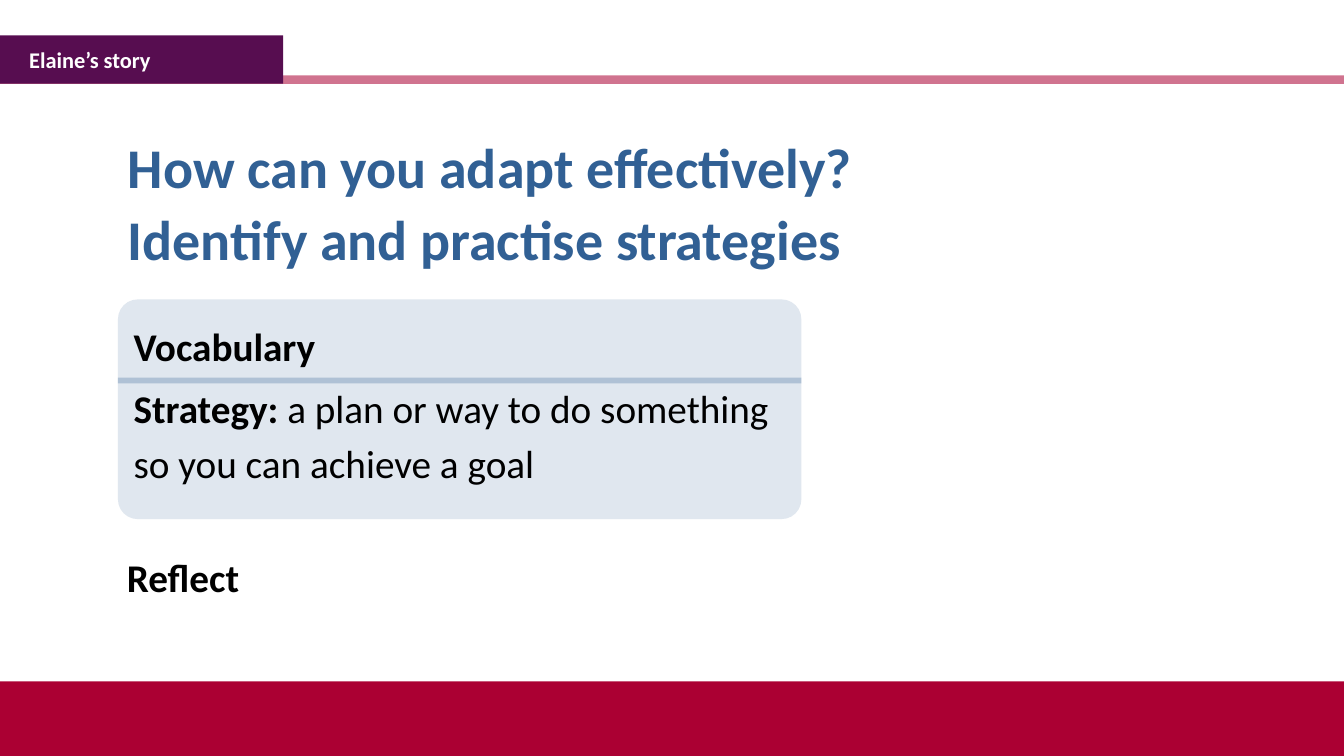
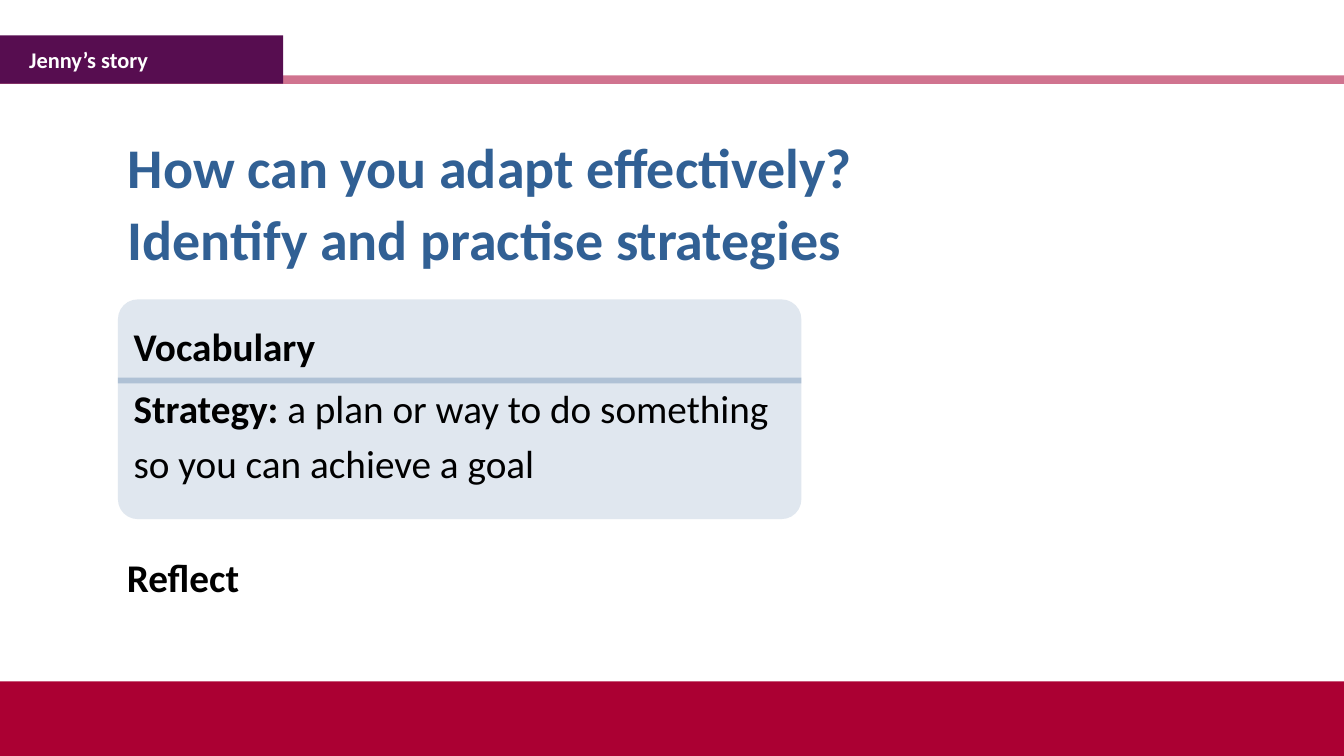
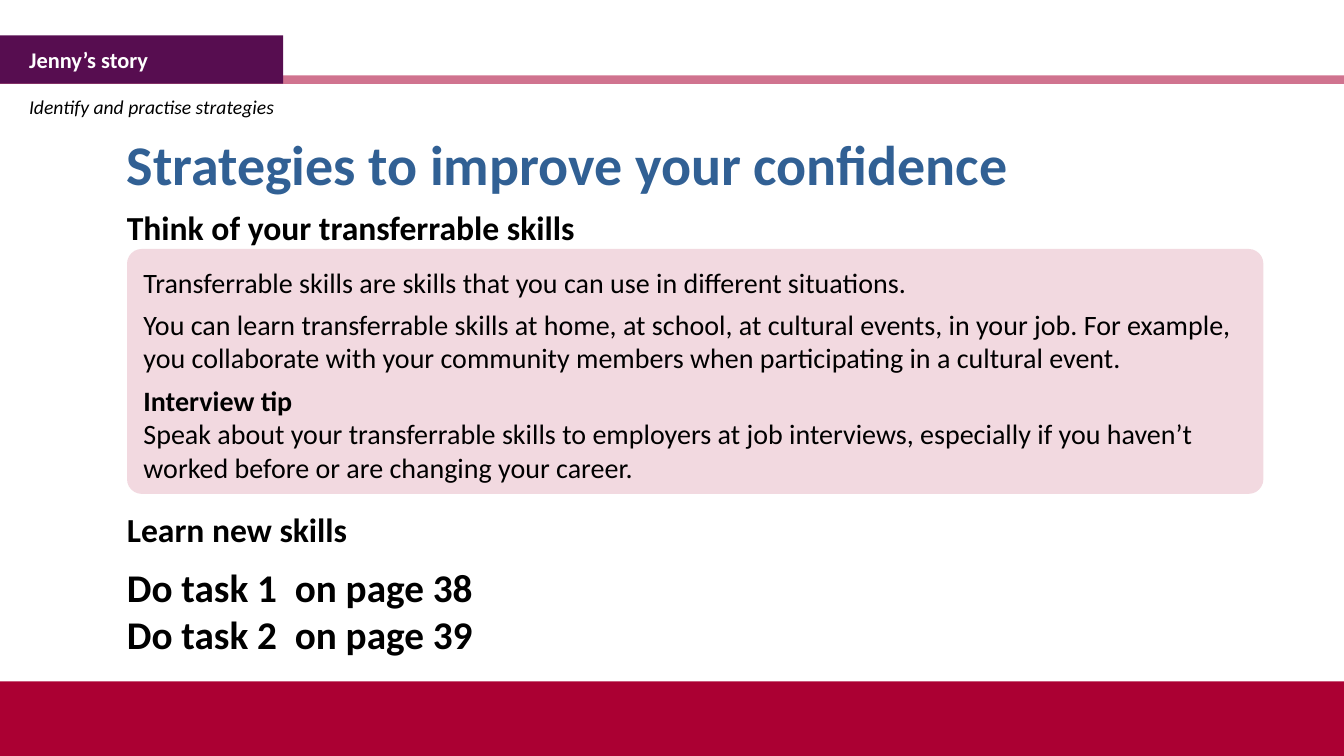
from dataclasses import dataclass

from lxml.etree import SubElement
from pptx import Presentation
from pptx.dml.color import RGBColor
from pptx.enum.shapes import MSO_CONNECTOR, MSO_SHAPE
from pptx.enum.text import MSO_ANCHOR, PP_ALIGN
from pptx.oxml.ns import qn
from pptx.shapes.base import BaseShape
from pptx.slide import Slide
from pptx.text.text import TextFrame
from pptx.util import Inches, Length, Pt

SLIDE_WIDTH, SLIDE_HEIGHT = Inches(13.33), Inches(7.5)
COLUMNS, ROWS = 40, 30
FONT = "Calibri"
BLUE, RED, PURPLE, BLACK, WHITE = "316094", "AB0033", "570D50", "000000", "FFFFFF"
TINT = 15
LEFT_MARGIN = 3.48
TITLE_WIDTH = 33.82


@dataclass(frozen=True)
class Area:
    """A place on the slide, in grid columns and rows."""
    column: float
    row: float
    columns: float
    rows: float


@dataclass(frozen=True)
class Line:
    """One paragraph; a bold lead may come before its text."""
    text: str
    size: float
    bold: bool = False
    italic: bool = False
    color: str = BLACK
    lead: str = ""
    spacing: float | Length | None = None
    before: float = 0
    after: float = 0


@dataclass(frozen=True)
class TextBlock:
    area: Area
    lines: tuple[Line, ...]


@dataclass(frozen=True)
class Panel:
    """A tinted rounded box; insets are left, top, right, bottom in inches."""
    block: TextBlock
    color: str
    corner: float
    insets: tuple[float, float, float, float]


@dataclass(frozen=True)
class Rule:
    """A level line across the grid."""
    first_column: float
    last_column: float
    row: float
    color: str
    width: float
    opacity: int


@dataclass(frozen=True)
class Page:
    story: str
    blocks: tuple[TextBlock, ...]
    panel: Panel
    rule: Rule | None = None


def across(columns: float) -> Length:
    return Length(round(SLIDE_WIDTH * columns / COLUMNS))


def down(rows: float) -> Length:
    return Length(round(SLIDE_HEIGHT * rows / ROWS))


def place(area: Area) -> tuple[Length, Length, Length, Length]:
    return across(area.column), down(area.row), across(area.columns), down(area.rows)


def rgb(color: str) -> RGBColor:
    return RGBColor.from_string(color)


def set_opacity(shape: BaseShape, percent: int) -> None:
    """Make the first colour of the shape partly see-through."""
    color = next(shape._element.spPr.iter(qn("a:srgbClr")))
    SubElement(color, qn("a:alpha"), val=str(percent * 1000))


def write(frame: TextFrame, lines: tuple[Line, ...]) -> None:
    frame.word_wrap = True
    for index, line in enumerate(lines):
        para = frame.paragraphs[0] if index == 0 else frame.add_paragraph()
        para.alignment = PP_ALIGN.LEFT
        para.line_spacing = line.spacing
        para.space_before, para.space_after = Pt(line.before), Pt(line.after)
        para.font.name, para.font.size = FONT, Pt(line.size)
        para.font.bold, para.font.italic = line.bold, line.italic
        para.font.color.rgb = rgb(line.color)
        if line.lead:
            span = para.add_run()
            span.text = line.lead
            span.font.bold = True
        para.add_run().text = line.text


def add_text(slide: Slide, block: TextBlock) -> None:
    box = slide.shapes.add_textbox(*place(block.area))
    write(box.text_frame, block.lines)


def add_box(slide: Slide, area: Area, color: str,
            kind: MSO_SHAPE = MSO_SHAPE.RECTANGLE) -> BaseShape:
    box = slide.shapes.add_shape(kind, *place(area))
    box.shadow.inherit = False
    box.fill.solid()
    box.fill.fore_color.rgb = rgb(color)
    box.line.fill.background()
    return box


def add_panel(slide: Slide, panel: Panel) -> None:
    box = add_box(slide, panel.block.area, panel.color, MSO_SHAPE.ROUNDED_RECTANGLE)
    box.adjustments[0] = panel.corner
    set_opacity(box, TINT)
    frame = box.text_frame
    frame.vertical_anchor = MSO_ANCHOR.TOP
    (frame.margin_left, frame.margin_top,
     frame.margin_right, frame.margin_bottom) = map(Inches, panel.insets)
    write(frame, panel.block.lines)


def add_rule(slide: Slide, rule: Rule) -> None:
    height = down(rule.row)
    connector = slide.shapes.add_connector(
        MSO_CONNECTOR.STRAIGHT,
        across(rule.first_column), height, across(rule.last_column), height)
    connector.line.color.rgb = rgb(rule.color)
    connector.line.width = Pt(rule.width)
    set_opacity(connector, rule.opacity)
    SubElement(connector._element.spPr, qn("a:effectLst"))


def add_frame(slide: Slide, story: str) -> None:
    """Draw the footer band, header line and story tag."""
    add_box(slide, Area(0, 27.04, COLUMNS, 2.96), RED)
    add_rule(slide, Rule(0, COLUMNS, 3.16, RED, 6, 55))
    tag = add_box(slide, Area(0, 1.4, 8.43, 1.92), PURPLE)
    tag.text_frame.vertical_anchor = MSO_ANCHOR.MIDDLE
    tag.text_frame.margin_left = Inches(0.29)
    write(tag.text_frame, (Line(story, 16, bold=True, color=WHITE),))


def title(text: str, spacing: Length | None = None) -> Line:
    gap = 0 if spacing else 6
    return Line(text, 40, bold=True, color=BLUE, spacing=spacing, before=gap, after=gap)


def heading(text: str, size: float = 28, spacing: float | None = None,
            before: float = 0, after: float = 0) -> Line:
    return Line(text, size, bold=True, spacing=spacing, before=before, after=after)


def strategy_page(story: str) -> Page:
    vocabulary = Area(3.51, 11.88, 20.34, 8.72)
    return Page(
        story,
        blocks=(
            TextBlock(Area(3.51, 5.08, TITLE_WIDTH, 6.12), (
                title("How can you adapt effectively?"),
                title("Identify and practise strategies", Pt(45)))),
            TextBlock(Area(LEFT_MARGIN, 21.48, 6.63, 2.44),
                      (heading("Reflect", spacing=1.15, after=8),)),
        ),
        panel=Panel(
            TextBlock(vocabulary, (
                heading("Vocabulary", spacing=1.15, before=6, after=6),
                Line("a plan or way to do something so you can achieve a goal", 28,
                     lead="Strategy: ", spacing=1.15))),
            BLUE, 0.09, (0.1, 0.1, 0.04, 0.04)),
        rule=Rule(vocabulary.column, vocabulary.column + vocabulary.columns,
                  15.1, BLUE, 4, 27),
    )


def confidence_page(story: str) -> Page:
    return Page(
        story,
        blocks=(
            TextBlock(Area(0.57, 3.56, 17.1, 2.56),
                      (Line("Identify and practise strategies", 14, italic=True),)),
            TextBlock(Area(LEFT_MARGIN, 4.96, TITLE_WIDTH, 3.08),
                      (title("Strategies to improve your confidence"),)),
            TextBlock(Area(LEFT_MARGIN, 8, 32.98, 2),
                      (heading("Think of your transferrable skills", 24),)),
            TextBlock(Area(LEFT_MARGIN, 19.2, 20, 2.68),
                      (heading("Learn new skills", 24, spacing=1.5),)),
            TextBlock(Area(LEFT_MARGIN, 22.16, 26.32, 4.16), (
                heading("Do task 1  on page 38"),
                heading("Do task 2  on page 39"))),
        ),
        panel=Panel(
            TextBlock(Area(3.78, 9.88, TITLE_WIDTH, 9.72), (
                Line("Transferrable skills are skills that you can use in "
                     "different situations.", 20, after=6),
                Line("You can learn transferrable skills at home, at school, at "
                     "cultural events, in your job. For example, you collaborate "
                     "with your community members when participating in a "
                     "cultural event.", 20, after=6),
                heading("Interview tip", 20),
                Line("Speak about your transferrable skills to employers at job "
                     "interviews, especially if you haven’t worked before or are "
                     "changing your career.", 20))),
            RED, 0.06, (0.12, 0.12, 0.12, 0.04)),
    )


def main() -> None:
    deck = Presentation()
    deck.slide_width, deck.slide_height = SLIDE_WIDTH, SLIDE_HEIGHT
    blank = deck.slide_layouts[6]
    pages = (strategy_page("Elaine’s story"),
             strategy_page("Jenny’s story"),
             confidence_page("Jenny’s story"))
    for page in pages:
        slide = deck.slides.add_slide(blank)
        add_frame(slide, page.story)
        add_panel(slide, page.panel)
        for block in page.blocks:
            add_text(slide, block)
        if page.rule:
            add_rule(slide, page.rule)
    deck.save("out.pptx")


if __name__ == "__main__":
    main()
